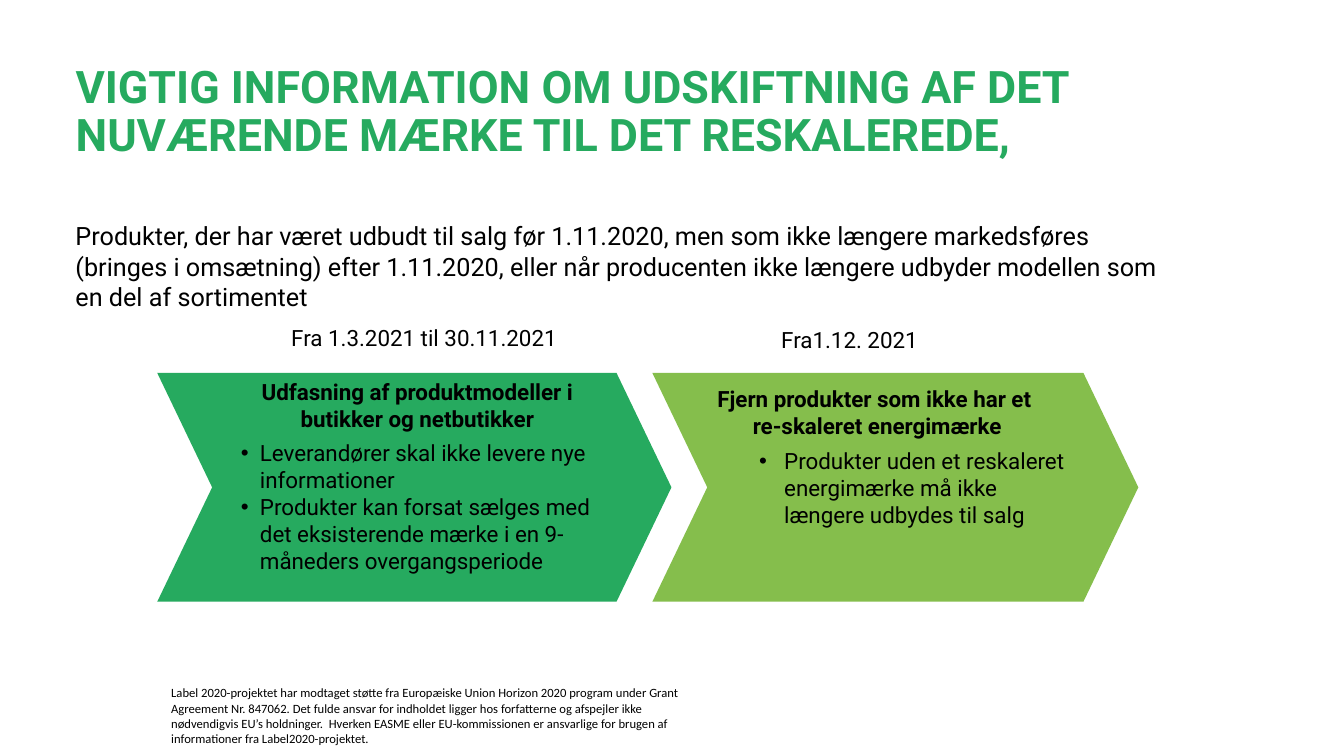
import pptx
import pptx.util
import pptx.dml.color
import pptx.enum.shapes
import pptx.enum.text
import lxml.etree
from pptx.oxml.ns import qn

Inches = pptx.util.Inches
Pt = pptx.util.Pt
RGB = pptx.dml.color.RGBColor
ALIGN = pptx.enum.text.PP_ALIGN

GREEN = RGB(0x26, 0xAA, 0x5F)
LIME = RGB(0x85, 0xBE, 0x4C)
BLACK = RGB(0, 0, 0)

# Text formats
BODY = {"name": "Roboto", "size": Pt(16), "bold": False}
HEAD = {**BODY, "bold": True}
INTRO = {**BODY, "size": Pt(18)}
TITLE = {**HEAD, "size": Pt(32)}
NOTE = {**BODY, "name": "Calibri", "size": Pt(9)}


def style(para, form, color=BLACK):
    for run in para.runs:
        for key, value in form.items():
            setattr(run.font, key, value)
        run.font.color.rgb = color


def bullet(para, left, hang):
    props = para._p.get_or_add_pPr()
    props.set("marL", str(Inches(left)))
    props.set("indent", str(-Inches(hang)))
    font = lxml.etree.SubElement(props, qn("a:buFont"))
    font.set("typeface", "Arial")
    mark = lxml.etree.SubElement(props, qn("a:buChar"))
    mark.set("char", "•")
    tabs = lxml.etree.SubElement(props, qn("a:tabLst"))
    tab = lxml.etree.SubElement(tabs, qn("a:tab"))
    tab.set("pos", str(Inches(0.5)))
    tab.set("algn", "l")


def add_title(slide, box, text):
    title = slide.shapes.title
    title.left, title.top, title.width, title.height = map(Inches, box)
    frame = title.text_frame
    frame.text = text
    frame.word_wrap = True
    frame.auto_size = pptx.enum.text.MSO_AUTO_SIZE.NONE
    frame.vertical_anchor = pptx.enum.text.MSO_ANCHOR.TOP
    para = frame.paragraphs[0]
    para.alignment = ALIGN.LEFT
    para.line_spacing = 0.9
    style(para, TITLE, GREEN)


def add_text(slide, box, lines, form=BODY, align=ALIGN.LEFT, wrap=True,
             indent=None):
    frame = slide.shapes.add_textbox(*map(Inches, box)).text_frame
    frame.word_wrap = wrap
    frame.auto_size = pptx.enum.text.MSO_AUTO_SIZE.SHAPE_TO_FIT_TEXT
    for i, line in enumerate(lines):
        para = frame.add_paragraph() if i else frame.paragraphs[0]
        para.text = line
        para.alignment = align
        if indent:
            bullet(para, *indent)
        style(para, form)


def add_step(slide, left, width, color):
    kind = pptx.enum.shapes.MSO_SHAPE.CHEVRON
    step = slide.shapes.add_shape(
        kind, Inches(left), Inches(3.7), Inches(width), Inches(2.27))
    step.adjustments[0] = 0.24
    step.shadow.inherit = False
    step.fill.solid()
    step.fill.fore_color.rgb = color
    step.line.fill.background()


def main():
    deck = pptx.Presentation()
    deck.slide_width, deck.slide_height = Inches(13.33), Inches(7.5)
    slide = deck.slides.add_slide(deck.slide_layouts[5])

    # Title and introduction
    add_title(slide, (0.65, 0.59, 12.01, 1.26),
              "VIGTIG INFORMATION OM UDSKIFTNING AF DET "
              "NUVÆRENDE MÆRKE TIL DET RESKALEREDE,")
    add_text(slide, (0.65, 2.14, 10.98, 1.01), [
        "Produkter, der har været udbudt til salg før 1.11.2020, men som ikke "
        "længere markedsføres (bringes i omsætning) efter 1.11.2020, eller "
        "når producenten ikke længere udbyder modellen som en del af "
        "sortimentet"], INTRO)

    # Phase-out step
    add_step(slide, 1.56, 5.1, GREEN)
    add_text(slide, (2.79, 3.17, 3.09, 0.37), ["Fra 1.3.2021 til 30.11.2021"])
    add_text(slide, (2.19, 3.7, 3.9, 0.64),
             ["Udfasning af produktmodeller i butikker og netbutikker"],
             HEAD, ALIGN.CENTER)
    add_text(slide, (2.04, 4.31, 4, 1.45), [
        "Leverandører skal ikke levere nye informationer",
        "Produkter kan forsat sælges med det eksisterende mærke i en "
        "9-måneders overgangsperiode"], indent=(0.44, 0.19))

    # Removal step
    add_step(slide, 6.47, 4.82, LIME)
    add_text(slide, (7.65, 3.19, 1.58, 0.37), ["Fra1.12. 2021"], wrap=False)
    add_text(slide, (6.99, 3.77, 3.42, 0.91),
             ["Fjern produkter som ikke har et \vre-skaleret energimærke"],
             HEAD, ALIGN.CENTER, wrap=False)
    add_text(slide, (7.18, 4.39, 3.54, 0.91), [
        "Produkter uden et reskaleret energimærke må ikke længere udbydes "
        "til salg"], indent=(0.5, 0.25))

    # Funding note
    add_text(slide, (1.6, 6.75, 5.37, 0.75), [
        "Label 2020-projektet har modtaget støtte fra Europæiske Union "
        "Horizon 2020 program under Grant Agreement Nr. 847062. Det fulde "
        "ansvar for indholdet ligger hos forfatterne og afspejler ikke "
        "nødvendigvis EU’s holdninger.  Hverken EASME eller EU-kommissionen "
        "er ansvarlige for brugen af informationer fra "
        "Label2020-projektet."], NOTE)

    deck.save("out.pptx")


if __name__ == "__main__":
    main()
